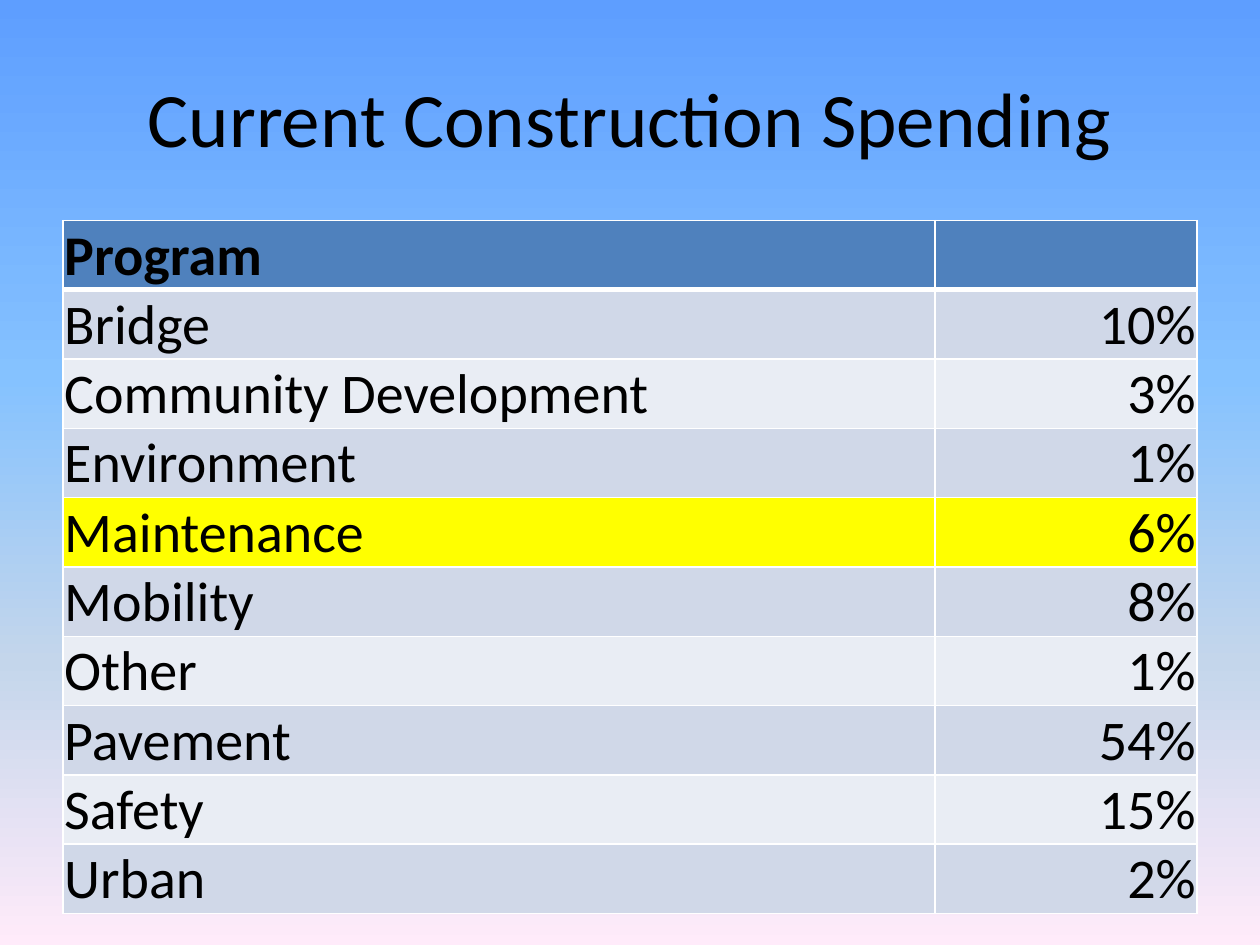
from copy import deepcopy

from lxml.etree import SubElement
from pptx import Presentation
from pptx.dml.color import RGBColor
from pptx.enum.text import MSO_ANCHOR, PP_ALIGN
from pptx.oxml.ns import qn
from pptx.util import Inches, Pt

BLACK, WHITE = "000000", "FFFFFF"
HEADER, BAND_DARK, BAND_LIGHT, HIGHLIGHT = "4F81BD", "D0D8E8", "E9EDF4", "FFFF00"
SKY = [(0, "5E9EFF"), (0.4, "85C2FF"), (0.7, "C4D6EB"), (1, "FFEBFA")]
SPENDING = [
    ("Program", ""),
    ("Bridge", "10%"),
    ("Community Development", "3%"),
    ("Environment", "1%"),
    ("Maintenance", "6%"),
    ("Mobility", "8%"),
    ("Other", "1%"),
    ("Pavement", "54%"),
    ("Safety", "15%"),
    ("Urban", "2%"),
]


def rgb(value):
    return RGBColor.from_string(value)


class SlideBuilder:
    def __init__(self, slide, font="Calibri", color=BLACK):
        self.s = slide
        self.font = font
        self.color = color

    def background(self, stops):
        """Fill the slide with a gradient running from top to bottom."""
        fill = self.s.background.fill
        fill.gradient()
        fill.gradient_angle = 270
        gs_list = self.s.element.find(".//" + qn("a:gsLst"))
        while len(gs_list) < len(stops):
            gs_list.append(deepcopy(gs_list[0]))
        for stop, (position, color) in zip(fill.gradient_stops, stops):
            stop.position = position
            stop.color.rgb = rgb(color)

    def set_text(self, tf, text, size, align, bold=False):
        p = tf.paragraphs[0]
        p.text = text
        p.alignment = align
        p.font.name = self.font
        p.font.size = Pt(size)
        p.font.bold = bold
        p.font.color.rgb = rgb(self.color)

    def title(self, text, left, top, width, height):
        box = self.s.shapes.add_textbox(
            Inches(left), Inches(top), Inches(width), Inches(height))
        tf = box.text_frame
        tf.word_wrap = True
        tf.vertical_anchor = MSO_ANCHOR.MIDDLE
        self.set_text(tf, text, 44, PP_ALIGN.CENTER)

    def borders(self, cell, widths):
        """Draw white cell edges; widths are points for left, right, top, bottom."""
        tc_pr = cell._tc.get_or_add_tcPr()
        for i, (side, width) in enumerate(zip("LRTB", widths)):
            ln = tc_pr.makeelement(qn(f"a:ln{side}"), {"w": str(Pt(width))})
            SubElement(SubElement(ln, qn("a:solidFill")), qn("a:srgbClr"), val=WHITE)
            tc_pr.insert(i, ln)

    def table(self, rows, left, top, col_widths, row_height, highlighted):
        frame = self.s.shapes.add_table(
            len(rows), len(col_widths), Inches(left), Inches(top),
            Inches(sum(col_widths)), Inches(row_height * len(rows)))
        table = frame.table
        for column, width in zip(table.columns, col_widths):
            column.width = Inches(width)
        for i, values in enumerate(rows):
            if i == 0:
                fill = HEADER
            elif values[0] == highlighted:
                fill = HIGHLIGHT
            else:
                fill = BAND_DARK if i % 2 else BAND_LIGHT
            widths = (1, 1, 3 if i == 1 else 1, 3 if i == 0 else 1)
            for j, text in enumerate(values):
                cell = table.cell(i, j)
                cell.margin_left = cell.margin_right = cell.margin_top = Inches(0.01)
                cell.margin_bottom = 0
                cell.vertical_anchor = MSO_ANCHOR.BOTTOM
                cell.fill.solid()
                cell.fill.fore_color.rgb = rgb(fill)
                self.borders(cell, widths)
                if text:
                    align = PP_ALIGN.RIGHT if j else PP_ALIGN.LEFT
                    self.set_text(cell.text_frame, text, 32, align, bold=i == 0)


def main():
    prs = Presentation()
    prs.slide_width, prs.slide_height = Inches(10), Inches(7.5)
    slide = SlideBuilder(prs.slides.add_slide(prs.slide_layouts[6]))
    slide.background(SKY)
    slide.title("Current Construction Spending", 0.5, 0.3, 9, 1.25)
    slide.table(SPENDING, 0.5, 1.75, (6.92, 2.08), 0.55, "Maintenance")
    prs.save("out.pptx")


if __name__ == "__main__":
    main()
